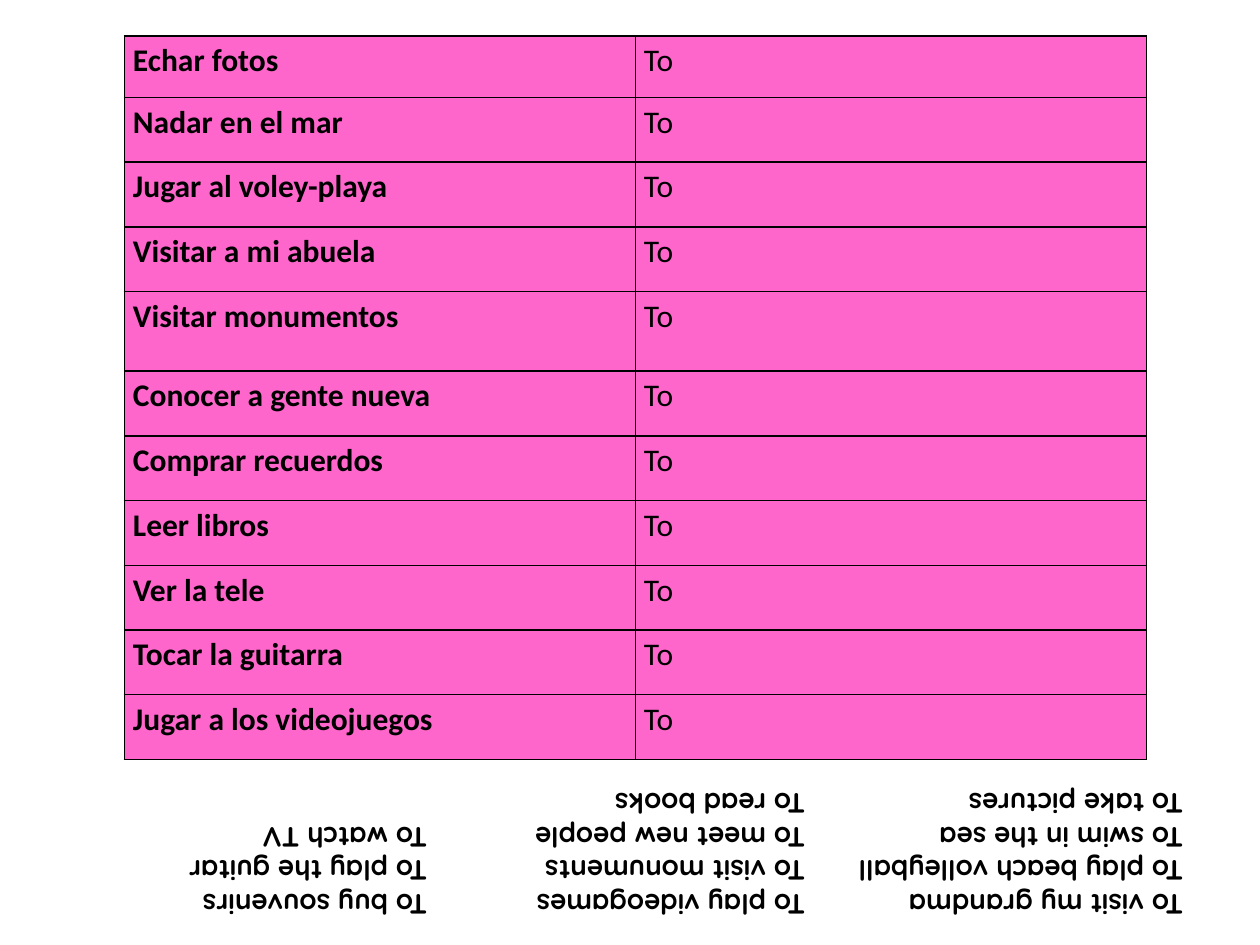
from lxml.etree import SubElement
from pptx import Presentation
from pptx.dml.color import RGBColor
from pptx.enum.text import MSO_AUTO_SIZE
from pptx.oxml.ns import qn
from pptx.util import Pt

COLORS = {"pink": "FF66CC", "black": "000000"}
PHRASES = [
    "Echar fotos", "Nadar en el mar", "Jugar al voley-playa",
    "Visitar a mi abuela", "Visitar monumentos", "Conocer a gente nueva",
    "Comprar recuerdos", "Leer libros", "Ver la tele",
    "Tocar la guitarra", "Jugar a los videojuegos",
]
ANSWERS = [
    ["To visit my grandma", "To play videogames", "To buy souvenirs"],
    ["To play beach volleyball", "To visit monuments", "To play the guitar"],
    ["To swim in the sea", "To meet new people", "To watch TV"],
    ["To take pictures", "To read books"],
]
ROW_HEIGHTS = [35] + [37] * 3 + [45.4] + [37] * 6
CELL_FORMAT = {"margin_left": Pt(5), "margin_right": Pt(5),
               "margin_top": 0, "margin_bottom": 0}
ANSWER_TAB = 216


def write(paragraph, text, **font_format):
    """Add a black run of text with the given font attributes."""
    run = paragraph.add_run()
    run.text = text
    run.font.color.rgb = RGBColor.from_string(COLORS["black"])
    for attribute, value in font_format.items():
        setattr(run.font, attribute, value)


def add_borders(cell):
    """Draw a thin black line on each side of the cell."""
    properties = cell._tc.get_or_add_tcPr()
    for side in ("lnL", "lnR", "lnT", "lnB"):
        line = SubElement(properties, qn(f"a:{side}"), w=str(Pt(1)))
        fill = SubElement(line, qn("a:solidFill"))
        SubElement(fill, qn("a:srgbClr"), val=COLORS["black"])


def fill_cell(cell, text, bold):
    """Format one vocabulary cell and write its text."""
    for attribute, value in CELL_FORMAT.items():
        setattr(cell, attribute, value)
    add_borders(cell)
    cell.fill.solid()
    cell.fill.fore_color.rgb = RGBColor.from_string(COLORS["pink"])
    paragraph = cell.text_frame.paragraphs[0]
    paragraph.line_spacing = 1.15
    write(paragraph, text, name="Calibri", size=Pt(18), bold=bold)


def add_vocabulary(slide, left, top, width):
    """Place the table of Spanish phrases with English gaps to fill."""
    table = slide.shapes.add_table(
        len(PHRASES), 2, Pt(left), Pt(top), Pt(width), Pt(sum(ROW_HEIGHTS))
    ).table
    for column in table.columns:
        column.width = Pt(width / 2)
    for row, height, phrase in zip(table.rows, ROW_HEIGHTS, PHRASES):
        row.height = Pt(height)
        fill_cell(row.cells[0], phrase, True)
        fill_cell(row.cells[1], "To", False)


def add_answers(slide, left, top, width, height):
    """Place the answers upside down in tabbed columns."""
    answers = slide.shapes.add_textbox(Pt(left), Pt(top), Pt(width), Pt(height))
    answers.rotation = 180
    frame = answers.text_frame
    frame.word_wrap = True
    frame.auto_size = MSO_AUTO_SIZE.SHAPE_TO_FIT_TEXT
    for index, line in enumerate(ANSWERS):
        paragraph = frame.add_paragraph() if index else frame.paragraphs[0]
        tabs = SubElement(paragraph._p.get_or_add_pPr(), qn("a:tabLst"))
        for column in (1, 2):
            SubElement(tabs, qn("a:tab"), pos=str(Pt(column * ANSWER_TAB)), algn="l")
        write(paragraph, "\t".join(line), name="Quicksand", size=Pt(16), bold=True)


def main():
    """Build the worksheet slide and save it."""
    presentation = Presentation()
    presentation.slide_width, presentation.slide_height = Pt(720), Pt(540)
    slide = presentation.slides.add_slide(presentation.slide_layouts[6])
    add_vocabulary(slide, 71, 20.7, 584)
    add_answers(slide, 48.2, 445.7, 635, 85)
    presentation.save("out.pptx")


if __name__ == "__main__":
    main()
